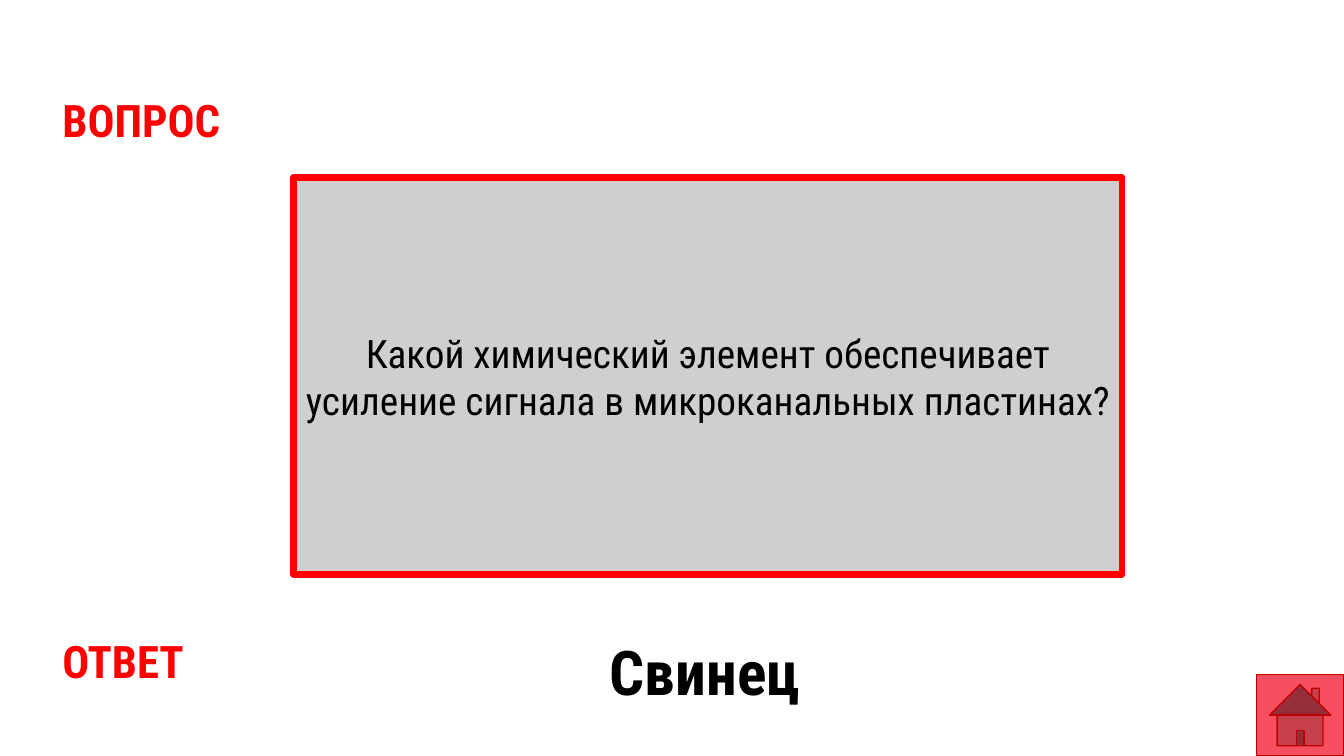
"""Build a quiz slide with a question, its answer and a home button."""
import pptx
import pptx.dml.color
import pptx.enum.shapes
import pptx.enum.text
import pptx.util

Inches = pptx.util.Inches
Pt = pptx.util.Pt
MSO_SHAPE = pptx.enum.shapes.MSO_SHAPE
PP_ALIGN = pptx.enum.text.PP_ALIGN
MSO_ANCHOR = pptx.enum.text.MSO_ANCHOR

FONT = "Roboto Condensed"
RED = "FF0000"
BLACK = "000000"
SLIDE_SIZE = (13.33, 7.5)
LABELS = [
    ("ВОПРОС", (0.52, 0.87, 5.18, 0.64), 32, RED),
    ("ОТВЕТ", (0.52, 6.24, 1.65, 0.64), 32, RED),
    ("Свинец", (5.95, 6.24, 5.18, 0.84), 44, BLACK),
]
QUESTION = "Какой химический элемент обеспечивает усиление сигнала в микроканальных пластинах?"
QUESTION_BOX = (2.91, 1.76, 8.22, 3.94)
HOME_SIZE = (0.87, 0.81)


def color(value):
    return pptx.dml.color.RGBColor.from_string(value)


def write(shape, text, size, text_color, bold=False):
    shape.text_frame.word_wrap = True
    paragraph = shape.text_frame.paragraphs[0]
    run = paragraph.add_run()
    run.text = text
    run.font.name = FONT
    run.font.size = Pt(size)
    run.font.bold = bold
    run.font.color.rgb = color(text_color)
    return paragraph


def add_panel(slide, kind, box, fill, line, width):
    shape = slide.shapes.add_shape(kind, *map(Inches, box))
    shape.shadow.inherit = False
    shape.fill.solid()
    shape.fill.fore_color.rgb = color(fill)
    shape.line.color.rgb = color(line)
    shape.line.width = Pt(width)
    return shape


def main():
    presentation = pptx.Presentation()
    presentation.slide_width, presentation.slide_height = map(Inches, SLIDE_SIZE)
    slide = presentation.slides.add_slide(presentation.slide_layouts[6])

    for text, box, size, text_color in LABELS:
        label = slide.shapes.add_textbox(*map(Inches, box))
        write(label, text, size, text_color, bold=True)
        label.text_frame.auto_size = pptx.enum.text.MSO_AUTO_SIZE.SHAPE_TO_FIT_TEXT

    panel = add_panel(slide, MSO_SHAPE.RECTANGLE, QUESTION_BOX, "D0CECE", RED, 4.5)
    write(panel, QUESTION, 28, BLACK).alignment = PP_ALIGN.CENTER
    panel.text_frame.vertical_anchor = MSO_ANCHOR.MIDDLE

    corner = [total - part for total, part in zip(SLIDE_SIZE, HOME_SIZE)]
    add_panel(slide, MSO_SHAPE.ACTION_BUTTON_HOME, (*corner, *HOME_SIZE), "F74F5F", "C00000", 1)

    presentation.save("out.pptx")


if __name__ == "__main__":
    main()
